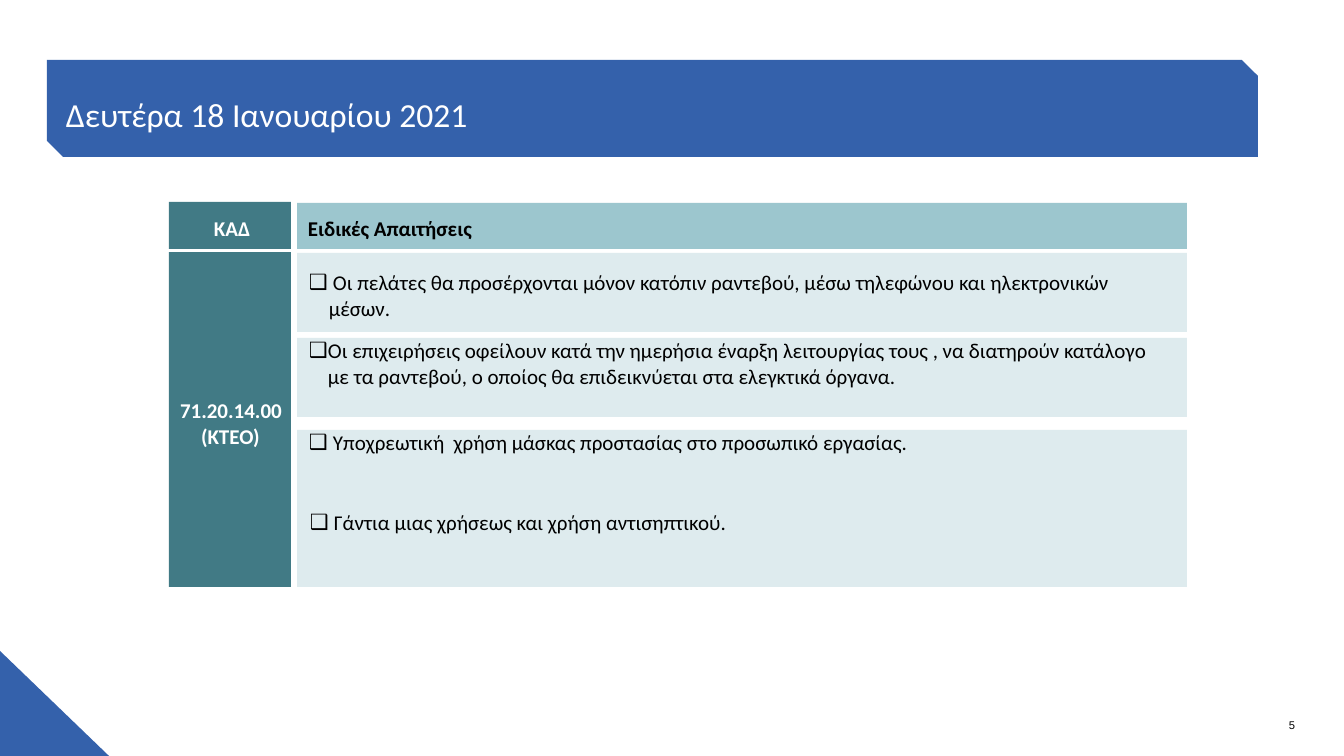
import pptx
import pptx.util
import pptx.oxml
import pptx.oxml.ns
import pptx.dml.color
import pptx.enum.shapes
import pptx.enum.text

PX = 914400 / 100.8  # EMU in one px
COLORS = {"blue": "3461AB", "teal": "417A85", "aqua": "9CC6CE",
          "pale": "DEEBEE", "white": "FFFFFF", "black": "000000"}


def paint(shape, color):
    shape.shadow.inherit = False
    shape.fill.solid()
    shape.fill.fore_color.rgb = pptx.dml.color.RGBColor.from_string(COLORS[color])
    shape.line.fill.background()


def write(shape, paragraphs, size=15, color="black", bold=False, font="Calibri",
          wrap=True, right=0):
    """Each paragraph is (text, left px, first-line px, bulleted, points before)."""
    frame = shape.text_frame
    frame_format = {"margin_left": 0, "margin_top": 0, "margin_bottom": 0,
                    "margin_right": round(right * PX), "word_wrap": wrap,
                    "vertical_anchor": pptx.enum.text.MSO_ANCHOR.TOP}
    for key, value in frame_format.items():
        setattr(frame, key, value)
    for index, (text, left, first, bulleted, before) in enumerate(paragraphs):
        paragraph = frame.add_paragraph() if index else frame.paragraphs[0]
        paragraph.text = text
        paragraph.alignment = pptx.enum.text.PP_ALIGN.LEFT
        if before:
            paragraph.space_before = pptx.util.Pt(before)
        properties = paragraph._p.get_or_add_pPr()
        properties.set("marL", str(round(left * PX)))
        properties.set("indent", str(round(first * PX)))
        if bulleted:
            for tag, name, value in (("a:buFont", "typeface", "Arial"),
                                     ("a:buChar", "char", "❑")):
                bullet = pptx.oxml.parse_xml(
                    f'<{tag} {pptx.oxml.ns.nsdecls("a")} {name}="{value}"/>')
                properties.append(bullet)
        font_format = {"name": font, "size": pptx.util.Pt(size), "bold": bold}
        for run in paragraph.runs:
            for key, value in font_format.items():
                setattr(run.font, key, value)
            run.font.color.rgb = pptx.dml.color.RGBColor.from_string(COLORS[color])


deck = pptx.Presentation()
deck.slide_width = round(1344 * PX)
deck.slide_height = round(756 * PX)
slide = deck.slides.add_slide(deck.slide_layouts[6])

# Corner triangle and title banner with two cut corners
for outline in (
    [(0, 651), (0, 756), (109, 756)],
    [(1242, 60), (47, 60), (47, 141), (63, 157), (1258, 157), (1258, 76)],
):
    builder = slide.shapes.build_freeform(*outline[0], scale=PX)
    builder.add_line_segments(outline[1:], close=True)
    paint(builder.convert_to_shape(), "blue")

# Panels of the requirements grid
panels = {}
for part, color, box in (
    ("code", "teal", (169, 252, 122, 335)),
    ("appointments", "pale", (297, 253, 890, 79)),
    ("register", "pale", (297, 338, 890, 79)),
    ("protection", "pale", (297, 430, 890, 157)),
    ("requirements head", "aqua", (297, 203, 890, 46)),
    ("code head", "teal", (169, 202, 122, 47)),
):
    panels[part] = slide.shapes.add_shape(
        pptx.enum.shapes.MSO_SHAPE.RECTANGLE, *(round(v * PX) for v in box))
    paint(panels[part], color)

# Requirements written inside their panels
write(panels["register"], [
    ("Οι επιχειρήσεις οφείλουν κατά την ημερήσια έναρξη λειτουργίας τους , "
     "να διατηρούν κατάλογο με τα ραντεβού, ο οποίος θα επιδεικνύεται στα "
     "ελεγκτικά όργανα.", 31, -19, True, 0)], right=30)
write(panels["protection"], [
    ("Υποχρεωτική  χρήση μάσκας προστασίας στο προσωπικό εργασίας.", 36, -24, True, 0),
    ("Γάντια μιας χρήσεως και χρήση αντισηπτικού.", 37, -24, True, 39)])

# Free-standing texts: title, headings, code, first requirement, page number
white_bold = {"color": "white", "bold": True}
for box, paragraphs, style in (
    ((57, 94, 1229, 36), [("Δευτέρα 18 Ιανουαρίου 2021", 9, 0, False, 0)],
     {"size": 24, "color": "white"}),
    ((178, 398, 106, 49), [("71.20.14.00 (ΚΤΕΟ)", 23, -21, False, 0)], white_bold),
    ((308, 270, 840, 50), [
        ("Οι πελάτες θα προσέρχονται μόνον κατόπιν ραντεβού, μέσω τηλεφώνου "
         "και ηλεκτρονικών", 25, -24, True, 0),
        ("μέσων.", 21, 0, False, 0)], {}),
    ((307, 215, 168, 24), [("Ειδικές Απαιτήσεις", 1, 0, False, 0)],
     {"bold": True, "wrap": False}),
    ((213, 216, 39, 24), [("ΚΑΔ", 1, 0, False, 0)], {**white_bold, "wrap": False}),
    ((1286, 718, 12, 14), [("5", 3, 0, False, 0)],
     {"size": 8, "font": "Arial", "wrap": False}),
):
    label = slide.shapes.add_textbox(*(round(v * PX) for v in box))
    write(label, paragraphs, **style)

deck.save("out.pptx")
